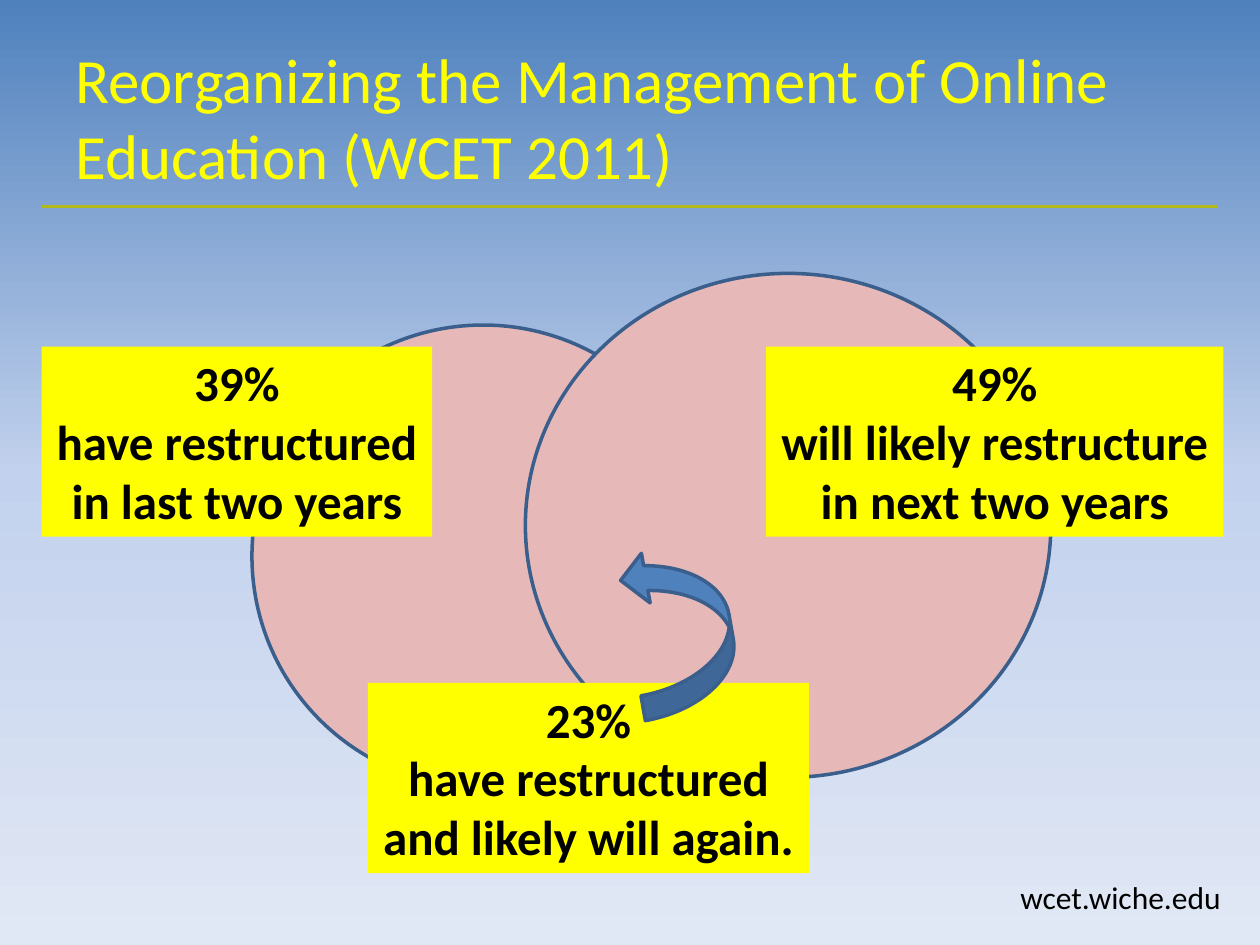
from copy import deepcopy

from pptx import Presentation
from pptx.dml.color import RGBColor
from pptx.enum.shapes import MSO_CONNECTOR as Connector, MSO_SHAPE as Shape
from pptx.enum.text import MSO_ANCHOR as Anchor, PP_ALIGN as Align
from pptx.oxml.ns import qn
from pptx.oxml.xmlchemy import OxmlElement
from pptx.util import Inches, Pt


def color(value):
    return RGBColor.from_string(value)


def style_text(frame, size, value, bold=False, align=Align.LEFT):
    for para in frame.paragraphs:
        para.alignment = align
        for span in para.runs:
            span.font.name = "Calibri"
            span.font.size = Pt(size)
            span.font.bold = bold
            span.font.color.rgb = color(value)


deck = Presentation()
deck.slide_width, deck.slide_height = Inches(10), Inches(7.5)
page = deck.slides.add_slide(deck.slide_layouts[6])
shapes = page.shapes

# Background gradient, top to bottom
background = page.background.fill
background.gradient()
background.gradient_angle = 270
stop_list = page._element.find(".//" + qn("a:gsLst"))
stop_list.append(deepcopy(stop_list[-1]))
gradient = [(0, "4F81BD"), (0.5, "C2D1ED"), (1, "E1E8F5")]
for stop, (position, value) in zip(background.gradient_stops, gradient):
    stop.position = position
    stop.color.rgb = color(value)

# Rule under the title
rule = shapes.add_connector(
    Connector.STRAIGHT, Inches(0.33), Inches(1.64), Inches(9.67), Inches(1.64))
rule.line.color.rgb = color("B2BB1C")
rule.line.width = Pt(1.5)
rule._element.spPr.append(OxmlElement("a:effectLst"))

# Web address and title
texts = [
    ("wcet.wiche.edu", 8, 6.92, 1.92, 0.4, 18, "000000", Anchor.TOP),
    ("Reorganizing the Management of Online Education (WCET 2011)",
     0.5, 0.3, 9, 1.25, 36, "FFFF00", Anchor.MIDDLE),
]
for text, left, top, width, height, size, value, anchor in texts:
    box = shapes.add_textbox(Inches(left), Inches(top), Inches(width), Inches(height))
    frame = box.text_frame
    frame.word_wrap = True
    frame.vertical_anchor = anchor
    frame.text = text
    style_text(frame, size, value)

# Overlapping circles, yellow labels, then the curved arrow on top
circle, label, arrow = Shape.OVAL, Shape.RECTANGLE, Shape.CURVED_RIGHT_ARROW
items = [
    (circle, 2, 2.58, 3.67, 3.67, "E6B9B8", ""),
    (circle, 4.17, 2.17, 4.17, 4, "E6B9B8", ""),
    (label, 0.33, 2.75, 3.1, 1.51, "FFFF00",
     "39%\nhave restructured\nin last two years"),
    (label, 6.08, 2.75, 3.63, 1.51, "FFFF00",
     "49%\nwill likely restructure\nin next two years"),
    (label, 2.92, 5.42, 3.5, 1.51, "FFFF00",
     "23%\nhave restructured\nand likely will again."),
    (arrow, 5, 4.33, 0.8, 1.33, "4F81BD", ""),
]
for kind, left, top, width, height, value, text in items:
    item = shapes.add_shape(
        kind, Inches(left), Inches(top), Inches(width), Inches(height))
    item.shadow.inherit = False
    item.fill.solid()
    item.fill.fore_color.rgb = color(value)
    if kind == label:
        item.line.fill.background()
        frame = item.text_frame
        frame.word_wrap = False
        frame.vertical_anchor = Anchor.TOP
        frame.text = text
        style_text(frame, 28, "000000", bold=True, align=Align.CENTER)
    else:
        item.line.color.rgb = color("3A5F8C")
        item.line.width = Pt(2)
    if kind == arrow:
        item.rotation = 170

deck.save("out.pptx")
